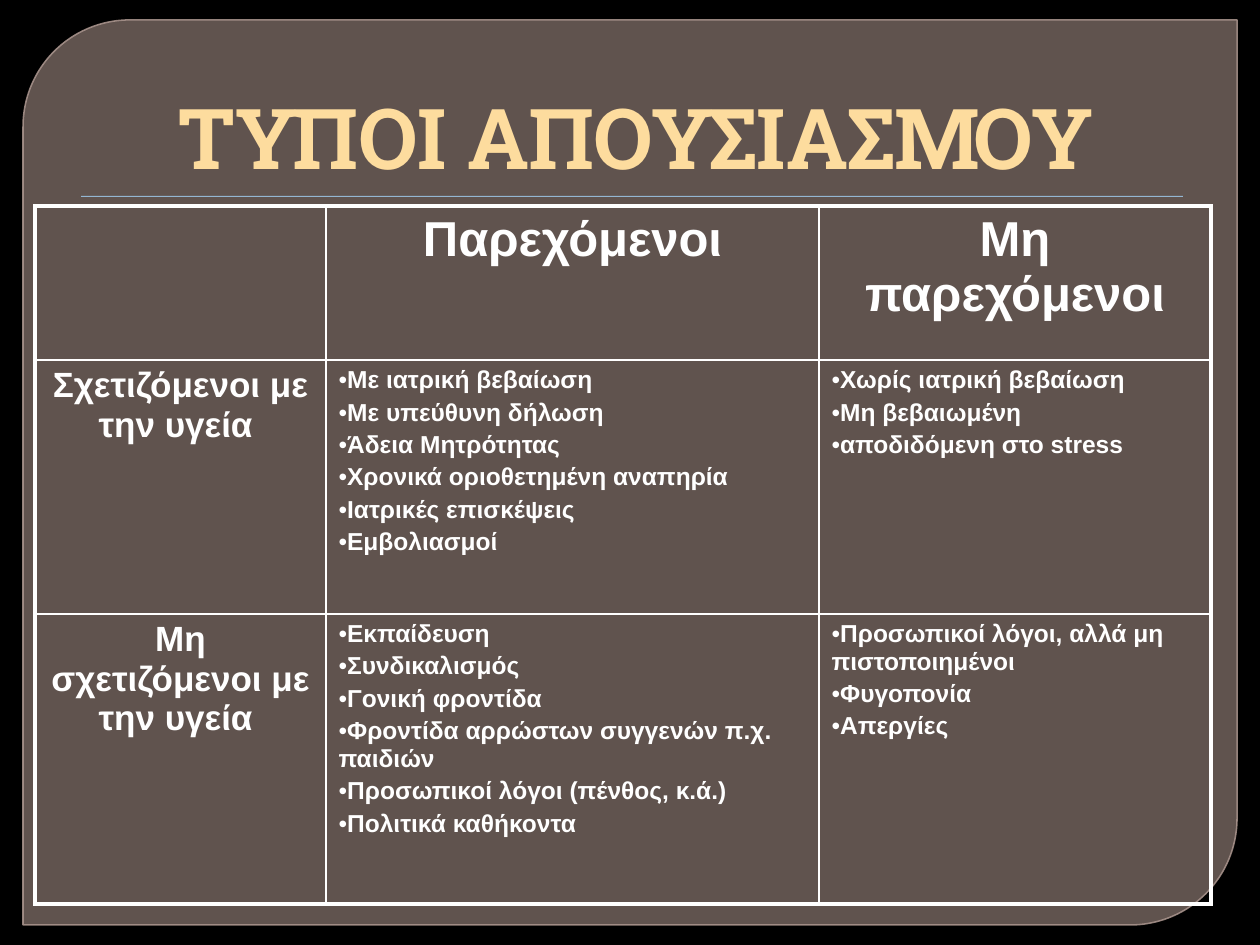
"""Builds a slide that sorts types of work absence in a table."""
from lxml.etree import SubElement
from pptx import Presentation
from pptx.dml.color import RGBColor
from pptx.enum.shapes import MSO_SHAPE
from pptx.enum.text import MSO_ANCHOR, MSO_AUTO_SIZE, PP_ALIGN
from pptx.oxml import parse_xml
from pptx.oxml.ns import nsdecls, qn
from pptx.util import Pt

TITLE = "ΤΥΠΟΙ ΑΠΟΥΣΙΑΣΜΟΥ"
HEADERS = ["Παρεχόμενοι", "Μη παρεχόμενοι"]
CATEGORIES = [
    ("Σχετιζόμενοι με την υγεία ",
     ["Με ιατρική βεβαίωση", "Με υπεύθυνη δήλωση", "Άδεια Μητρότητας",
      "Χρονικά οριοθετημένη αναπηρία", "Ιατρικές επισκέψεις", "Εμβολιασμοί"],
     ["Χωρίς ιατρική βεβαίωση", "Μη βεβαιωμένη", "αποδιδόμενη στο stress"]),
    ("Μη σχετιζόμενοι με την υγεία ",
     ["Εκπαίδευση", "Συνδικαλισμός", "Γονική φροντίδα",
      "Φροντίδα αρρώστων συγγενών π.χ. παιδιών",
      "Προσωπικοί λόγοι (πένθος, κ.ά.)", "Πολιτικά καθήκοντα"],
     ["Προσωπικοί λόγοι, αλλά μη πιστοποιημένοι", "Φυγοπονία", "Απεργίες"]),
]
COLUMNS = [291, 493, 392]
ROWS = [154, 254, 290]
FONT = "Arial"
WHITE = "FFFFFF"
THICK, THIN = 2.25, 1


def px(length):
    return round(length * 914400 / 126)


def place(*lengths):
    return [px(length) for length in lengths]


def paint(color_format, color):
    color_format.rgb = RGBColor.from_string(color)


def set_alpha(fill_format, percent):
    color = fill_format._xPr.find(qn("a:solidFill"))[0]
    SubElement(color, qn("a:alpha"), val=str(percent * 1000))


def add_panel(page, kind, area, color):
    panel = page.shapes.add_shape(kind, *place(*area))
    panel.shadow.inherit = False
    panel.fill.solid()
    paint(panel.fill.fore_color, color)
    return panel


def write(para, text, size, font, color):
    span = para.add_run()
    span.text = text
    span.font.size = Pt(size)
    span.font.name = font
    span.font.bold = True
    paint(span.font.color, color)


def fill_cell(cell, texts, size, bulleted=False):
    for index, text in enumerate(texts):
        frame = cell.text_frame
        para = frame.add_paragraph() if index else frame.paragraphs[0]
        properties = para._p.get_or_add_pPr()
        spacing = SubElement(properties, qn("a:spcBef"))
        SubElement(spacing, qn("a:spcPct"), val="20000")
        if bulleted:
            SubElement(properties, qn("a:buFont"), typeface=FONT)
            SubElement(properties, qn("a:buChar"), char="•")
        else:
            para.alignment = PP_ALIGN.CENTER
        write(para, text, size, FONT, WHITE)


def border_cell(cell, outer_sides):
    cell.fill.background()
    properties = cell._tc.get_or_add_tcPr()
    for index, side in enumerate("LRTB"):
        width = Pt(THICK if side in outer_sides else THIN)
        properties.insert(index, parse_xml(
            f'<a:ln{side} {nsdecls("a")} w="{width}"><a:solidFill>'
            f'<a:srgbClr val="{WHITE}"/></a:solidFill></a:ln{side}>'))


def add_backdrop(page):
    page.background.fill.solid()
    paint(page.background.fill.fore_color, "000000")
    panel = add_panel(page, MSO_SHAPE.ROUND_2_DIAG_RECTANGLE,
                      (23, 20, 1214, 905), "948079")
    panel.adjustments[0] = 0.118
    set_alpha(panel.fill, 65)
    panel.line.width = Pt(0.87)
    paint(panel.line.color, "A9948D")
    set_alpha(panel.line.fill, 88)
    rule = add_panel(page, MSO_SHAPE.RECTANGLE, (81, 196, 1102, 1), "94B6D2")
    rule.line.fill.background()
    effects = rule._element.spPr.find(qn("a:effectLst"))
    shadow = SubElement(effects, qn("a:outerShdw"), blurRad=str(Pt(1)),
                        dist=str(Pt(1)), dir="5400000")
    color = SubElement(shadow, qn("a:srgbClr"), val="000000")
    SubElement(color, qn("a:alpha"), val="75000")


def add_title(page):
    title = page.shapes.title
    title.left, title.top, title.width, title.height = place(63, 35, 1134, 158)
    frame = title.text_frame
    frame.auto_size = MSO_AUTO_SIZE.NONE
    frame.vertical_anchor = MSO_ANCHOR.BOTTOM
    para = frame.paragraphs[0]
    para.alignment = PP_ALIGN.CENTER
    para.line_spacing = 1.0
    para._p.get_or_add_pPr().set("marL", str(px(8)))
    write(para, TITLE, 48, "Roboto Slab", "FDDC9E")
    page.shapes._spTree.append(title._element)


def add_absence_table(page):
    area = place(35, 206, sum(COLUMNS), sum(ROWS))
    table = page.shapes.add_table(len(ROWS), len(COLUMNS), *area).table
    table.first_row = table.horz_banding = False
    for column, width in zip(table.columns, COLUMNS):
        column.width = px(width)
    for row, height in zip(table.rows, ROWS):
        row.height = px(height)
    for column, header in enumerate(HEADERS, 1):
        fill_cell(table.cell(0, column), [header], 28)
    for row, (category, *reasons) in enumerate(CATEGORIES, 1):
        fill_cell(table.cell(row, 0), [category], 20)
        for column, items in enumerate(reasons, 1):
            fill_cell(table.cell(row, column), items, 14, bulleted=True)
    last_row, last_column = len(ROWS) - 1, len(COLUMNS) - 1
    for row in range(len(ROWS)):
        for column in range(len(COLUMNS)):
            edges = {"L": column == 0, "R": column == last_column,
                     "T": row == 0, "B": row == last_row}
            border_cell(table.cell(row, column),
                        [side for side, outer in edges.items() if outer])


def main():
    deck = Presentation()
    deck.slide_width, deck.slide_height = place(1260, 945)
    page = deck.slides.add_slide(deck.slide_layouts[5])
    add_backdrop(page)
    add_title(page)
    add_absence_table(page)
    deck.save("out.pptx")


if __name__ == "__main__":
    main()
